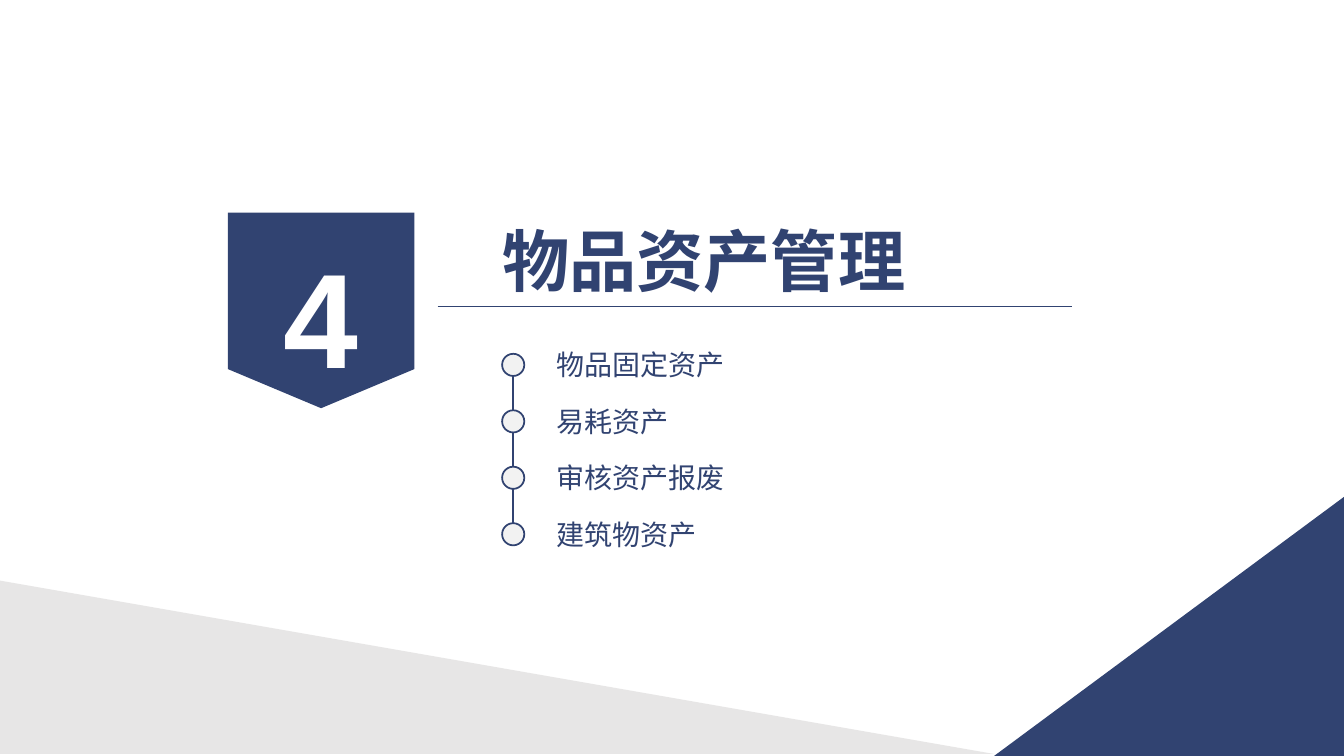
from lxml import etree
from pptx import Presentation
from pptx.dml.color import RGBColor
from pptx.enum.shapes import MSO_CONNECTOR as Connector, MSO_SHAPE as Shape
from pptx.enum.text import MSO_ANCHOR as Anchor, MSO_AUTO_SIZE as AutoSize, PP_ALIGN as Align
from pptx.oxml.ns import qn
from pptx.util import Inches, Pt

COLOURS = {"navy": "314371", "grey": "E7E6E6", "dot": "F2F2F2", "white": "FFFFFF"}
LATIN, CHINESE = "Arial", "Noto Sans CJK SC"
TOPICS = ["物品固定资产", "易耗资产", "审核资产报废", "建筑物资产"]


def colour(name):
    """Return the named palette colour."""
    return RGBColor.from_string(COLOURS[name])


def style_text(para, size, font, shade, bold=False):
    """Set the font of a paragraph for Latin and Chinese text."""
    para.font.size, para.font.bold, para.font.name = Pt(size), bold, font
    para.font.color.rgb = colour(shade)
    properties = para._p.get_or_add_pPr().find(qn("a:defRPr"))
    latin = properties.find(qn("a:latin"))
    east_asian = etree.Element(qn("a:ea"), typeface=font)
    latin.addnext(east_asian)


def paint(shape, fill, line=None):
    """Give a shape a flat fill and an optional outline."""
    shape.shadow.inherit = False
    shape.fill.solid()
    shape.fill.fore_color.rgb = colour(fill)
    if line:
        shape.line.color.rgb = colour(line)
        shape.line.width = Pt(1.25)
    else:
        shape.line.fill.background()


def add_line(page, start, end, width):
    """Draw a straight navy line between two points."""
    ends = [Inches(value) for value in (*start, *end)]
    line = page.shapes.add_connector(Connector.STRAIGHT, *ends)
    line.line.color.rgb = colour("navy")
    line.line.width = Pt(width)
    etree.SubElement(line._element.spPr, qn("a:effectLst"))


def add_badge(page, left, top, width, height, number):
    """Place the section number on a pointed badge."""
    badge = page.shapes.add_shape(
        Shape.FLOWCHART_OFFPAGE_CONNECTOR,
        Inches(left), Inches(top), Inches(width), Inches(height))
    paint(badge, "navy")
    badge.text_frame.vertical_anchor = Anchor.MIDDLE
    para = badge.text_frame.paragraphs[0]
    para.text, para.alignment, para.line_spacing = number, Align.CENTER, 1.3
    style_text(para, 96, LATIN, "white", bold=True)


def add_heading(page, left, top, width, height, text):
    """Place the section title above its rule."""
    indent = 0.54
    title = page.shapes.title
    title.left, title.top = Inches(left + indent), Inches(top)
    title.width, title.height = Inches(4.2), Inches(height)
    frame = title.text_frame
    frame.text, frame.word_wrap, frame.margin_right = text, False, 0
    frame.auto_size, frame.vertical_anchor = AutoSize.NONE, Anchor.TOP
    para = frame.paragraphs[0]
    para.alignment = Align.LEFT
    style_text(para, 48, CHINESE, "navy", bold=True)
    rule = top + height
    add_line(page, (left, rule), (left + width, rule), 1)


def add_topics(page, left, top, pitch, topics):
    """Place the topics beside a vertical chain of dots."""
    size = 0.22
    centre = left + size / 2
    last = top + pitch * (len(topics) - 1)
    add_line(page, (centre, top + size), (centre, last + size), 1.25)
    for index, topic in enumerate(topics):
        dot_top = top + index * pitch
        dot = page.shapes.add_shape(
            Shape.OVAL, Inches(left), Inches(dot_top), Inches(size), Inches(size))
        paint(dot, "dot", "navy")
        box = page.shapes.add_textbox(
            Inches(left + 0.41), Inches(dot_top - 0.13), Inches(3.5), Inches(0.47))
        frame = box.text_frame
        frame.word_wrap, frame.auto_size = True, AutoSize.SHAPE_TO_FIT_TEXT
        frame.margin_left = frame.margin_right = Inches(0.13)
        frame.margin_top = frame.margin_bottom = Inches(0.07)
        para = frame.paragraphs[0]
        para.text = topic
        style_text(para, 20, CHINESE, "navy")


def add_corner(page, corner, side, tip, fill):
    """Draw a triangle from a bottom corner up one side and along the base."""
    points = [(Inches(x), Inches(y)) for x, y in (corner, side, tip)]
    builder = page.shapes.build_freeform(*points[0], scale=1.0)
    builder.add_line_segments(points[1:], close=True)
    paint(builder.convert_to_shape(), fill)


def add_section_slide(deck):
    """Build the section opener for asset management."""
    page = deck.slides.add_slide(deck.slide_layouts[5])
    add_badge(page, 2.26, 2.11, 1.85, 1.94, "4")
    add_heading(page, 4.34, 2.13, 6.29, 0.91, "物品资产管理")
    add_topics(page, 4.98, 3.51, 0.56, TOPICS)
    add_corner(page, (0, 7.48), (0, 5.76), (9.86, 7.48), "grey")
    add_corner(page, (13.33, 7.5), (13.33, 4.93), (9.86, 7.5), "navy")


def main():
    """Create the deck and save it."""
    deck = Presentation()
    deck.slide_width, deck.slide_height = Inches(13.33), Inches(7.5)
    add_section_slide(deck)
    deck.save("out.pptx")


if __name__ == "__main__":
    main()
